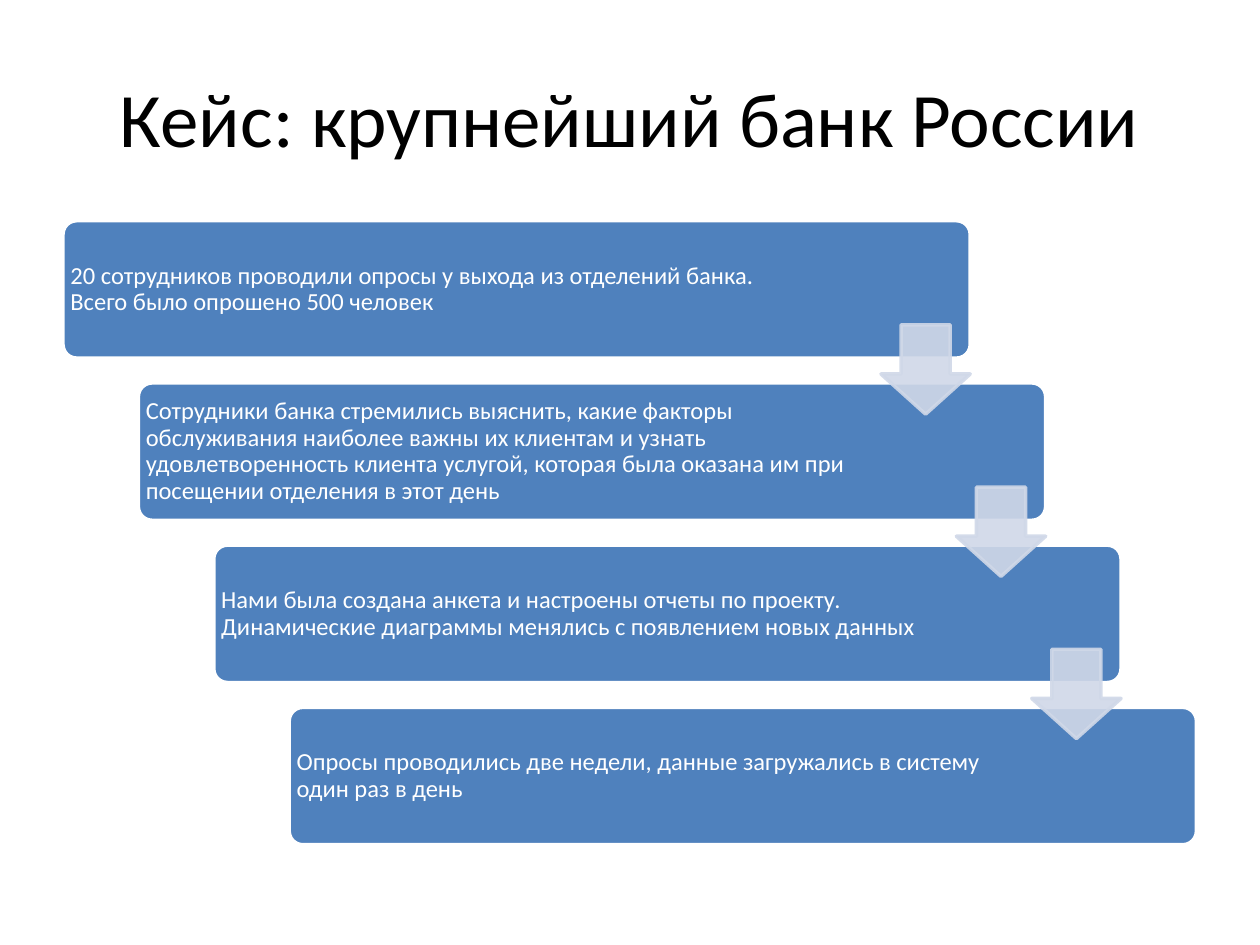
import pptx
import pptx.dml.color
import pptx.enum.shapes
import pptx.enum.text
import pptx.oxml
import pptx.oxml.ns
import pptx.util

Cm, Pt = pptx.util.Cm, pptx.util.Pt
SHAPE = pptx.enum.shapes.MSO_SHAPE
ANCHOR = pptx.enum.text.MSO_ANCHOR
ALIGN = pptx.enum.text.PP_ALIGN

STEPS = [
    "20 сотрудников проводили опросы у выхода из отделений банка. "
    "Всего было опрошено 500 человек",
    "Сотрудники банка стремились выяснить, какие факторы обслуживания "
    "наиболее важны их клиентам и узнать удовлетворенность клиента услугой, "
    "которая была оказана им при посещении отделения в этот день",
    "Нами была создана анкета и настроены отчеты по проекту. "
    "Динамические диаграммы менялись с появлением новых данных",
    "Опросы проводились две недели, данные загружались в систему "
    "один раз в день",
]
LEFT, TOP = 1.27, 4.45
SHIFT_X, SHIFT_Y = 1.52, 3.27
BOX_WIDTH, BOX_HEIGHT, TEXT_WIDTH = 18.29, 2.77, 14.97
ARROW_LEFT, ARROW_TOP, ARROW_SIZE = 17.76, 6.55, 1.8


def paint(color_format, value):
    """Set a fill, line or font colour from a hex string."""
    color_format.rgb = pptx.dml.color.RGBColor.from_string(value)


def add_filled_shape(group, kind, place, adjustments, fill, line):
    shape = group.shapes.add_shape(kind, *[Cm(length) for length in place])
    shape.shadow.inherit = False
    for number, value in enumerate(adjustments):
        shape.adjustments[number] = value
    shape.fill.solid()
    paint(shape.fill.fore_color, fill)
    paint(shape.line.color, line)
    shape.line.width = Pt(2)
    return shape


deck = pptx.Presentation()
deck.slide_width, deck.slide_height = Cm(25.4), Cm(19.05)
page = deck.slides.add_slide(deck.slide_layouts[5])

title = page.shapes.title
title.left, title.top, title.width, title.height = Cm(1.27), Cm(0.76), Cm(22.86), Cm(3.18)
title.text_frame.vertical_anchor = ANCHOR.MIDDLE
para = title.text_frame.paragraphs[0]
para.alignment = ALIGN.CENTER
span = para.add_run()
span.text = "Кейс: крупнейший банк России"
span.font.name, span.font.size = "Calibri", Pt(44)
paint(span.font.color, "000000")

staircase = page.shapes.add_group_shape()
for index, step in enumerate(STEPS):
    left, top = LEFT + index * SHIFT_X, TOP + index * SHIFT_Y
    add_filled_shape(staircase, SHAPE.ROUNDED_RECTANGLE,
                     (left, top, BOX_WIDTH, BOX_HEIGHT), [0.1], "4F81BD", "FFFFFF")

    box = staircase.shapes.add_textbox(Cm(left), Cm(top), Cm(TEXT_WIDTH), Cm(BOX_HEIGHT))
    frame = box.text_frame
    frame.word_wrap = True
    frame.vertical_anchor = ANCHOR.MIDDLE
    frame.margin_left = frame.margin_right = Cm(0.15)
    frame.margin_top = frame.margin_bottom = Cm(0.15)
    para = frame.paragraphs[0]
    para.alignment = ALIGN.LEFT
    para.line_spacing = 0.9
    para.space_after = Pt(4.9)
    span = para.add_run()
    span.text = step
    span.font.name, span.font.size = "Calibri", Pt(14)
    paint(span.font.color, "FFFFFF")

for index in range(len(STEPS) - 1):
    place = (ARROW_LEFT + index * SHIFT_X, ARROW_TOP + index * SHIFT_Y, ARROW_SIZE, ARROW_SIZE)
    # The first adjustment is the shaft width, the second the head length.
    arrow = add_filled_shape(staircase, SHAPE.DOWN_ARROW, place,
                             [0.55, 0.45], "D0D8E8", "D0D8E8")
    for color in arrow.element.spPr.iter(pptx.oxml.ns.qn("a:srgbClr")):
        alpha = pptx.oxml.parse_xml(
            f'<a:alpha {pptx.oxml.ns.nsdecls("a")} val="90000"/>')
        color.append(alpha)

deck.save("out.pptx")
